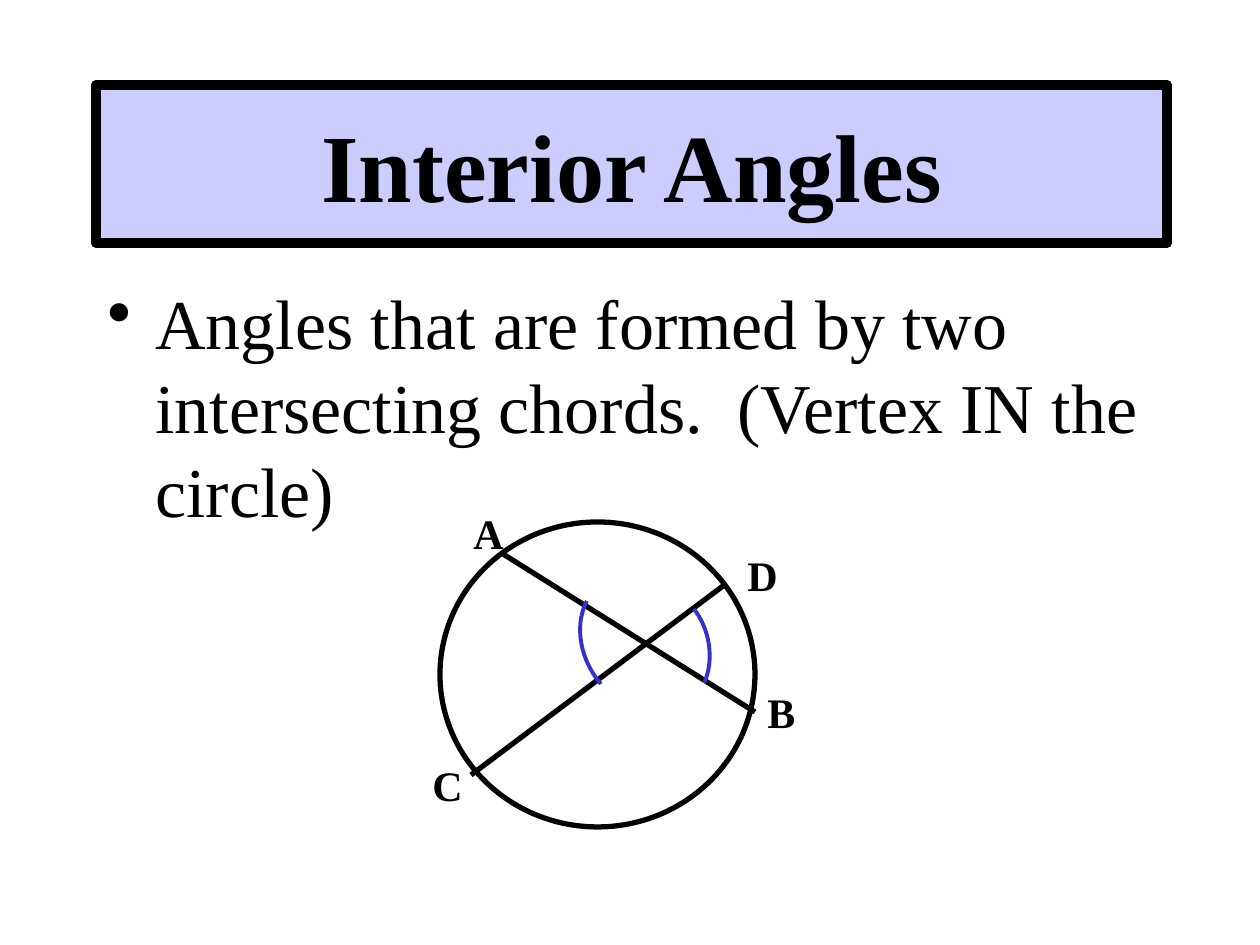
"""Build the Interior Angles slide with its circle and intersecting chords."""
from lxml import etree
from pptx import Presentation
from pptx import util as u
from pptx.dml.color import RGBColor
from pptx.enum import shapes, text
from pptx.oxml.ns import qn

PX = u.Inches(1) / 126
COLORS = {"ink": "000000", "banner": "CCCCFF", "arc": "3333CC"}


def px(*lengths):
    return [u.Emu(round(length * PX)) for length in lengths]


def write(paragraph, words, size, bold):
    run = paragraph.add_run()
    run.text = words
    run.font.name = "Times New Roman"
    run.font.size = u.Pt(size)
    run.font.bold = bold
    run.font.color.rgb = RGBColor.from_string(COLORS["ink"])


prs = Presentation()
prs.slide_width, prs.slide_height = px(1260, 945)
slide = prs.slides.add_slide(prs.slide_layouts[6])
canvas = slide.shapes

definition = canvas.add_textbox(*px(95, 273, 1071, 567)).text_frame
definition.word_wrap = True
sentence = definition.paragraphs[0]
indent = px(48)[0]
properties = sentence._p.get_or_add_pPr()
properties.set("marL", str(indent))
properties.set("indent", str(-indent))
etree.SubElement(properties, qn("a:buChar"), char="•")
sentence.line_spacing = u.Pt(48)
write(sentence, "Angles that are formed by two intersecting chords.  (Vertex IN the circle)", 40, False)

banner = canvas.add_shape(shapes.MSO_SHAPE.RECTANGLE, *px(96, 85, 1071, 158))
banner.shadow.inherit = False
banner.fill.solid()
banner.fill.fore_color.rgb = RGBColor.from_string(COLORS["banner"])
banner.line.color.rgb = RGBColor.from_string(COLORS["ink"])
banner.line.width = u.Pt(6)
banner.text_frame.vertical_anchor = text.MSO_ANCHOR.MIDDLE
heading = banner.text_frame.paragraphs[0]
heading.alignment = text.PP_ALIGN.CENTER
write(heading, "Interior Angles", 55, True)

circle = canvas.add_shape(shapes.MSO_SHAPE.OVAL, *px(440, 522, 315, 305))
circle.shadow.inherit = False
circle.fill.background()
circle.line.color.rgb = RGBColor.from_string(COLORS["ink"])
circle.line.width = u.Pt(3)

for ends in [(503, 554, 755, 712), (723, 586, 471, 775)]:
    chord = canvas.add_connector(shapes.MSO_CONNECTOR.STRAIGHT, *px(*ends))
    chord.line.color.rgb = RGBColor.from_string(COLORS["ink"])
    chord.line.width = u.Pt(3)
    etree.SubElement(chord._element.spPr, qn("a:effectLst"))

for letter, left, top in [("A", 461, 501), ("B", 755, 680), ("C", 420, 753), ("D", 735, 543)]:
    point = canvas.add_textbox(*px(left, top, 53, 63)).text_frame
    point.word_wrap = True
    point.auto_size = text.MSO_AUTO_SIZE.SHAPE_TO_FIT_TEXT
    write(point.paragraphs[0], letter, 24, True)

STEPS = 24
for controls in [
    [(694, 609), (711, 631), (714, 662), (704, 683)],
    [(601, 684), (580, 660), (574, 625), (587, 601)],
]:
    curve = []
    for step in range(STEPS + 1):
        t = step / STEPS
        weights = [(1 - t) ** 3, 3 * t * (1 - t) ** 2, 3 * t**2 * (1 - t), t**3]
        curve.append(px(*(sum(w * c for w, c in zip(weights, axis)) for axis in zip(*controls))))
    outline = canvas.build_freeform(*curve[0])
    outline.add_line_segments(curve[1:], close=False)
    angle = outline.convert_to_shape()
    angle.shadow.inherit = False
    angle.fill.background()
    angle.line.color.rgb = RGBColor.from_string(COLORS["arc"])
    angle.line.width = u.Pt(2.25)

prs.save("out.pptx")
